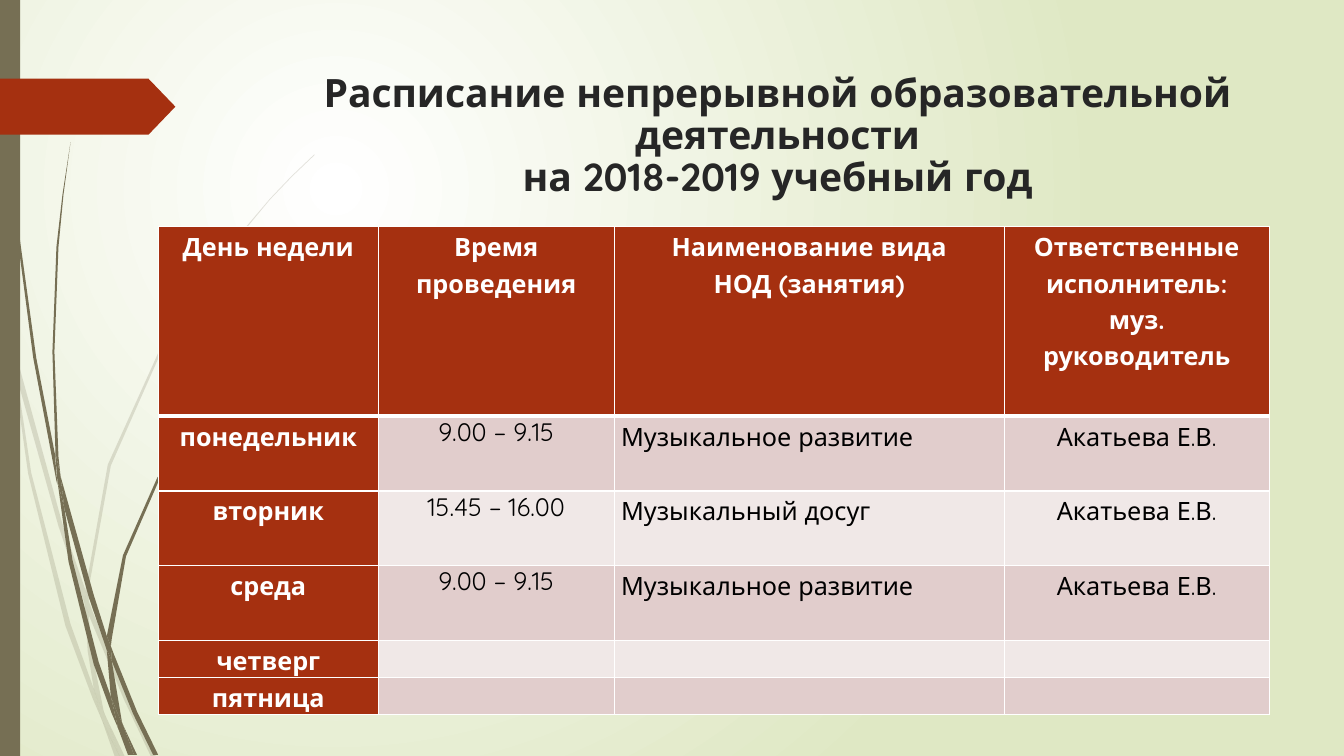
from lxml import etree
from pptx import Presentation
from pptx import util as u
from pptx.dml.color import RGBColor
from pptx.enum import shapes, text
from pptx.oxml import ns

COLORS = {
    "white": "FFFFFF", "green": "DFE8C4", "olive": "766F54", "red": "A53010",
    "title": "262626", "black": "000000", "band_dark": "E1CDCC", "band_light": "F0E8E7",
}
FONT = "Quicksand"


def paint(shape, color):
    shape.shadow.inherit = False
    shape.fill.solid()
    shape.fill.fore_color.rgb = RGBColor.from_string(COLORS[color])
    shape.line.fill.background()


def add_text(para, words, size, color, bold):
    span = para.add_run()
    span.text = words
    span.font.name = FONT
    span.font.size = u.Pt(size)
    span.font.bold = bold
    span.font.color.rgb = RGBColor.from_string(COLORS[color])


deck = Presentation()
deck.slide_width, deck.slide_height = u.Pt(960), u.Pt(540)
page = deck.slides.add_slide(deck.slide_layouts[5])

# Background: radial glow centred in the upper left
glow = page.background.fill
glow.gradient()
for stop, color in zip(glow.gradient_stops, ("white", "green")):
    stop.color.rgb = RGBColor.from_string(COLORS[color])
gradient = page.element.find(".//" + ns.qn("a:gradFill"))
gradient.remove(gradient.find(ns.qn("a:lin")))
circle = etree.SubElement(gradient, ns.qn("a:path"), path="circle")
etree.SubElement(circle, ns.qn("a:fillToRect"), l="50000", t="50000", r="100000", b="100000")

# Grass blades: outline points on a grid of 0.72 pt
pale_blades = [
    [(11, 350), (9, 322), (0, 282), (0, 299), (10, 344)],
    [(58, 522), (84, 599), (85, 586), (62, 520), (14, 345), (17, 376)],
    [(92, 607), (88, 596), (88, 610), (123, 694), (150, 751), (155, 751), (127, 692)],
    [(119, 751), (124, 751), (105, 711)],
    [(93, 683), (70, 619), (31, 469), (17, 376), (11, 350), (28, 470), (65, 621), (92, 693),
     (101, 714), (99, 707)],
    [(84, 599), (87, 646), (93, 683), (96, 692), (105, 711), (103, 706), (91, 646), (88, 610),
     (88, 608)],
    [(88, 584), (110, 462), (160, 349), (229, 245), (268, 198), (290, 175), (312, 154),
     (312, 153), (289, 175), (268, 197), (228, 244), (158, 348), (107, 461), (85, 584),
     (85, 586), (88, 596)],
    [(101, 714), (114, 751), (119, 751)],
    [(88, 608), (88, 596), (85, 586), (84, 599)],
    [(96, 692), (93, 683), (99, 707), (101, 714), (119, 751), (105, 711)],
]
dark_blades = [
    [(7, 110), (17, 233), (33, 355), (56, 477), (57, 481), (55, 457), (55, 453), (36, 355),
     (19, 232), (8, 109), (5, 48), (4, 0), (3, 0), (4, 48)],
    [(88, 592), (106, 645), (106, 631), (93, 590), (60, 472), (64, 505)],
    [(113, 649), (110, 641), (111, 656), (132, 708), (152, 749), (157, 749), (136, 706)],
    [(110, 691), (98, 657), (72, 556), (64, 505), (57, 477), (68, 557), (93, 659), (111, 708),
     (117, 722), (116, 717)],
    [(60, 472), (58, 453), (54, 349), (58, 245), (63, 193), (70, 141), (62, 193), (56, 245),
     (52, 349), (55, 449)],
    [(133, 749), (136, 749), (122, 719)],
    [(57, 477), (64, 505), (60, 472), (55, 449), (55, 453)],
    [(111, 633), (125, 552), (158, 476), (205, 406), (231, 374), (245, 359), (261, 344),
     (260, 344), (245, 358), (231, 373), (204, 405), (156, 474), (122, 551), (106, 631),
     (110, 641)],
    [(117, 722), (127, 749), (131, 749)],
    [(106, 645), (110, 691), (116, 706), (122, 719), (121, 716), (111, 656), (109, 651)],
    [(106, 645), (109, 651), (111, 656), (110, 641), (106, 631)],
    [(116, 706), (110, 691), (116, 717), (117, 722), (130, 749), (133, 749), (122, 719)],
]
for blades, opacity in ((pale_blades, 20), (dark_blades, 100)):
    for points in blades:
        outline = page.shapes.build_freeform(*points[0], scale=u.Pt(0.72))
        outline.add_line_segments(points[1:], close=True)
        blade = outline.convert_to_shape()
        paint(blade, "olive")
        tint = blade.element.spPr.find(ns.qn("a:solidFill"))[0]
        etree.SubElement(tint, ns.qn("a:alpha"), val=str(opacity * 1000))

# Side bar and arrow tag
bar = page.shapes.add_shape(shapes.MSO_SHAPE.RECTANGLE, 0, 0, u.Pt(14.4), u.Pt(540))
paint(bar, "olive")
tag = page.shapes.add_shape(shapes.MSO_SHAPE.PENTAGON, 0, u.Pt(56.2), u.Pt(125.3), u.Pt(40))
tag.adjustments[0] = 0.48
paint(tag, "red")

# Title
title = page.shapes.title
title.left, title.top, title.width, title.height = u.Pt(204.5), u.Pt(49), u.Pt(702), u.Pt(101)
frame = title.text_frame
frame.word_wrap = True
frame.auto_size = text.MSO_AUTO_SIZE.NONE
frame.vertical_anchor = text.MSO_ANCHOR.TOP
para = frame.paragraphs[0]
para.alignment = text.PP_ALIGN.CENTER
para.line_spacing = 0.9
add_text(para, "Расписание непрерывной образовательной деятельности", 27.9, "title", True)
para.add_line_break()
add_text(para, "на 2018-2019 учебный год", 27.9, "title", True)

# Timetable
teacher = "Акатьева Е.В."
timetable = [
    ("День недели", "Время проведения", "Наименование вида\nНОД (занятия)",
     "Ответственные исполнитель:\nмуз.\nруководитель"),
    ("понедельник", "9.00 – 9.15", "Музыкальное развитие", teacher),
    ("вторник", "15.45 – 16.00", "Музыкальный досуг", teacher),
    ("среда", "9.00 – 9.15", "Музыкальное развитие", teacher),
    ("четверг", "", "", ""),
    ("пятница", "", "", ""),
]
widths = [157, 168.5, 278.6, 189.4]
heights = [135.4, 53.3, 53.3, 53.3, 26.6, 26.6]
table = page.shapes.add_table(len(heights), len(widths), u.Pt(113.2), u.Pt(162),
                              u.Pt(sum(widths)), u.Pt(sum(heights))).table
for column, width in zip(table.columns, widths):
    column.width = u.Pt(width)
for row, height in zip(table.rows, heights):
    row.height = u.Pt(height)

for r, entries in enumerate(timetable):
    for c, entry in enumerate(entries):
        cell = table.cell(r, c)
        heading = r == 0 or c == 0
        cell.margin_left = cell.margin_right = u.Pt(5)
        cell.margin_top = cell.margin_bottom = 0

        # White borders, thick under the header
        for side in ("lnL", "lnR", "lnT", "lnB"):
            thick = (r, side) in ((0, "lnB"), (1, "lnT"))
            border = etree.SubElement(cell._tc.get_or_add_tcPr(), ns.qn("a:" + side),
                                      w=str(u.Pt(3 if thick else 1)))
            ink = etree.SubElement(border, ns.qn("a:solidFill"))
            etree.SubElement(ink, ns.qn("a:srgbClr"), val=COLORS["white"])

        band = "band_dark" if r % 2 else "band_light"
        cell.fill.solid()
        cell.fill.fore_color.rgb = RGBColor.from_string(COLORS["red" if heading else band])

        for i, line in enumerate(entry.split("\n") if entry else []):
            para = cell.text_frame.paragraphs[0] if i == 0 else cell.text_frame.add_paragraph()
            subject = c == 2 and not heading
            para.alignment = text.PP_ALIGN.LEFT if subject else text.PP_ALIGN.CENTER
            para.line_spacing = 1.0 if c == 1 and not heading else 1.15
            add_text(para, line, 18, "white" if heading else "black", heading)

deck.save("out.pptx")
